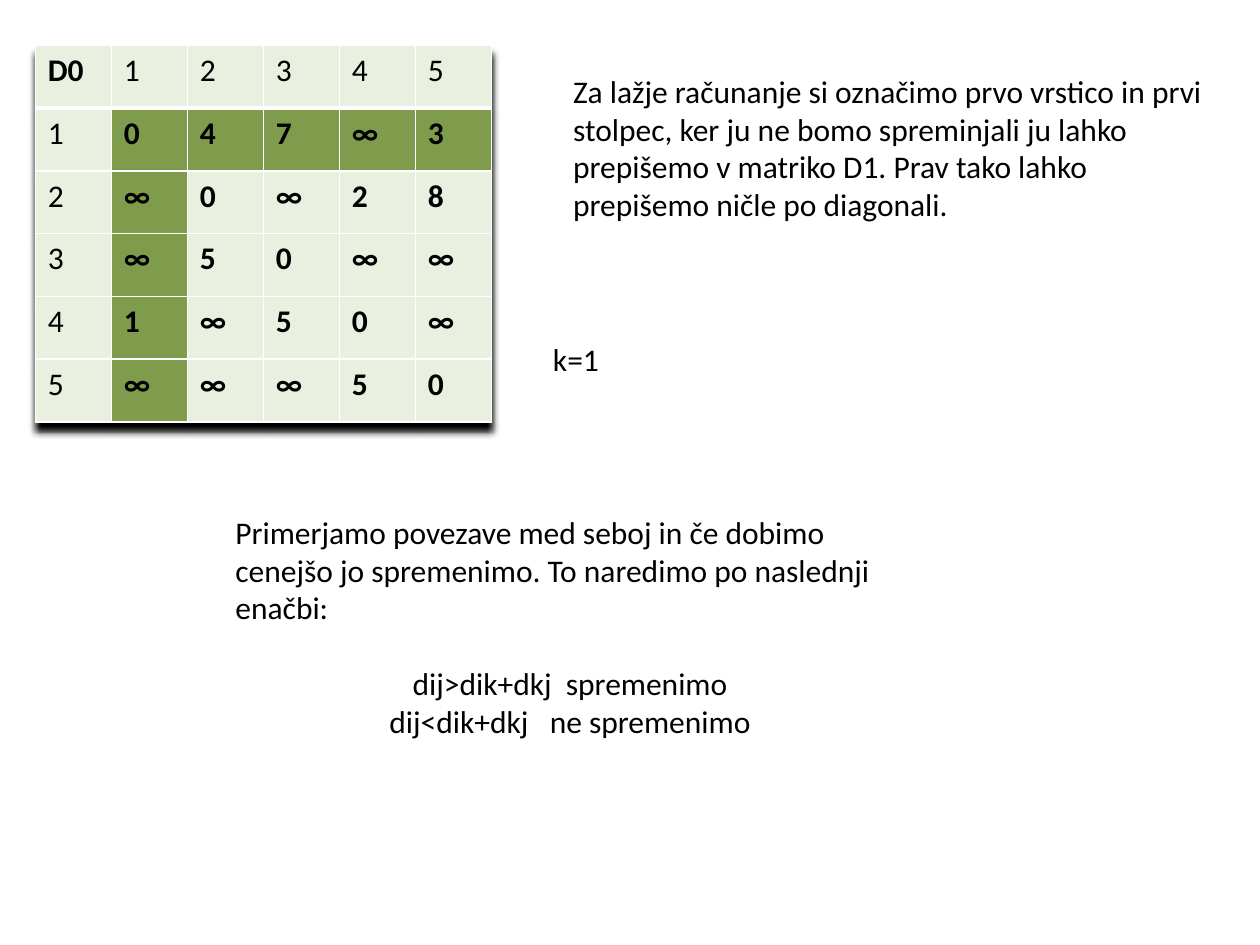
"""Build a slide that explains the first step of the Floyd-Warshall algorithm."""
from dataclasses import dataclass

from lxml.etree import SubElement
from pptx import Presentation
from pptx.dml.color import RGBColor as Color
from pptx.enum.text import PP_ALIGN as Align
from pptx.oxml import parse_xml
from pptx.oxml.ns import nsdecls, qn
from pptx.util import Inches, Pt


@dataclass(frozen=True)
class Theme:
    font: str = "Calibri"
    size: int = 18
    ink: str = "000000"
    pale: str = "EAF0E0"
    marked: str = "7E9C4C"
    rule: str = "FFFFFF"
    thin: int = 1
    thick: int = 3


INFINITY = "∞"
DISTANCES = [
    ["0", "4", "7", INFINITY, "3"],
    [INFINITY, "0", INFINITY, "2", "8"],
    [INFINITY, "5", "0", INFINITY, INFINITY],
    ["1", INFINITY, "5", "0", INFINITY],
    [INFINITY, INFINITY, INFINITY, "5", "0"],
]


class SlideBuilder:
    def __init__(self, slide, theme):
        self.slide = slide
        self.theme = theme

    def format_runs(self, paragraph, bold=False):
        for run in paragraph.runs:
            run.font.name = self.theme.font
            run.font.size = Pt(self.theme.size)
            run.font.bold = bold
            run.font.color.rgb = Color.from_string(self.theme.ink)

    def text(self, box, statement, formulas=()):
        shape = self.slide.shapes.add_textbox(*map(Inches, box))
        frame = shape.text_frame
        frame.word_wrap = True
        frame.text = "\n".join([statement, *formulas])
        for index, paragraph in enumerate(frame.paragraphs):
            self.format_runs(paragraph)
            if index:
                paragraph.alignment = Align.CENTER
            if index == 1:
                paragraph.space_before = Pt(self.theme.size * 1.2)

    def borders(self, cell, top, bottom):
        properties = cell._tc.get_or_add_tcPr()
        thin = self.theme.thin
        for side, width in zip("LRTB", (thin, thin, top, bottom)):
            line = SubElement(properties, qn(f"a:ln{side}"), w=str(Pt(width)))
            fill = SubElement(line, qn("a:solidFill"))
            SubElement(fill, qn("a:srgbClr"), val=self.theme.rule)

    def table_shadow(self, table):
        shadow = parse_xml(
            f'<a:effectLst {nsdecls("a")}>'
            f'<a:outerShdw blurRad="{Pt(4)}" dist="{Pt(5)}" dir="5400000" rotWithShape="0">'
            f'<a:srgbClr val="{self.theme.ink}"/></a:outerShdw></a:effectLst>'
        )
        table._tbl.tblPr.insert(0, shadow)

    def matrix(self, box, name, values):
        theme = self.theme
        labels = [str(number + 1) for number in range(len(values))]
        rows = [[name, *labels]] + [[label, *row] for label, row in zip(labels, values)]
        size = len(rows)
        table = self.slide.shapes.add_table(size, size, *map(Inches, box)).table
        self.table_shadow(table)
        for i, row in enumerate(rows):
            for j, value in enumerate(row):
                cell = table.cell(i, j)
                cell.text_frame.text = value
                is_label = (i == 0) != (j == 0)
                self.format_runs(cell.text_frame.paragraphs[0], bold=not is_label)
                self.borders(
                    cell,
                    top=theme.thick if i == 1 else theme.thin,
                    bottom=theme.thick if i == 0 else theme.thin,
                )
                is_marked = min(i, j) == 1
                cell.fill.solid()
                cell.fill.fore_color.rgb = Color.from_string(
                    theme.marked if is_marked else theme.pale
                )


def main():
    presentation = Presentation()
    presentation.slide_width = Inches(10)
    presentation.slide_height = Inches(7.5)
    slide = presentation.slides.add_slide(presentation.slide_layouts[6])
    builder = SlideBuilder(slide, Theme())
    builder.matrix((0.28, 0.36, 3.62, 2.99), "D0", DISTANCES)
    builder.text(
        (4.45, 0.52, 5.28, 1.62),
        "Za lažje računanje si označimo prvo vrstico in prvi stolpec, ker ju ne bomo "
        "spreminjali ju lahko prepišemo v matriko D1. Prav tako lahko prepišemo ničle "
        "po diagonali.",
    )
    builder.text(
        (1.77, 4.02, 5.51, 2.52),
        "Primerjamo povezave med seboj in če dobimo cenejšo jo spremenimo. "
        "To naredimo po naslednji enačbi:",
        ["dij>dik+dkj  spremenimo", "dij<dik+dkj   ne spremenimo"],
    )
    builder.text((4.29, 2.65, 1.42, 0.4), "k=1")
    presentation.save("out.pptx")


if __name__ == "__main__":
    main()
